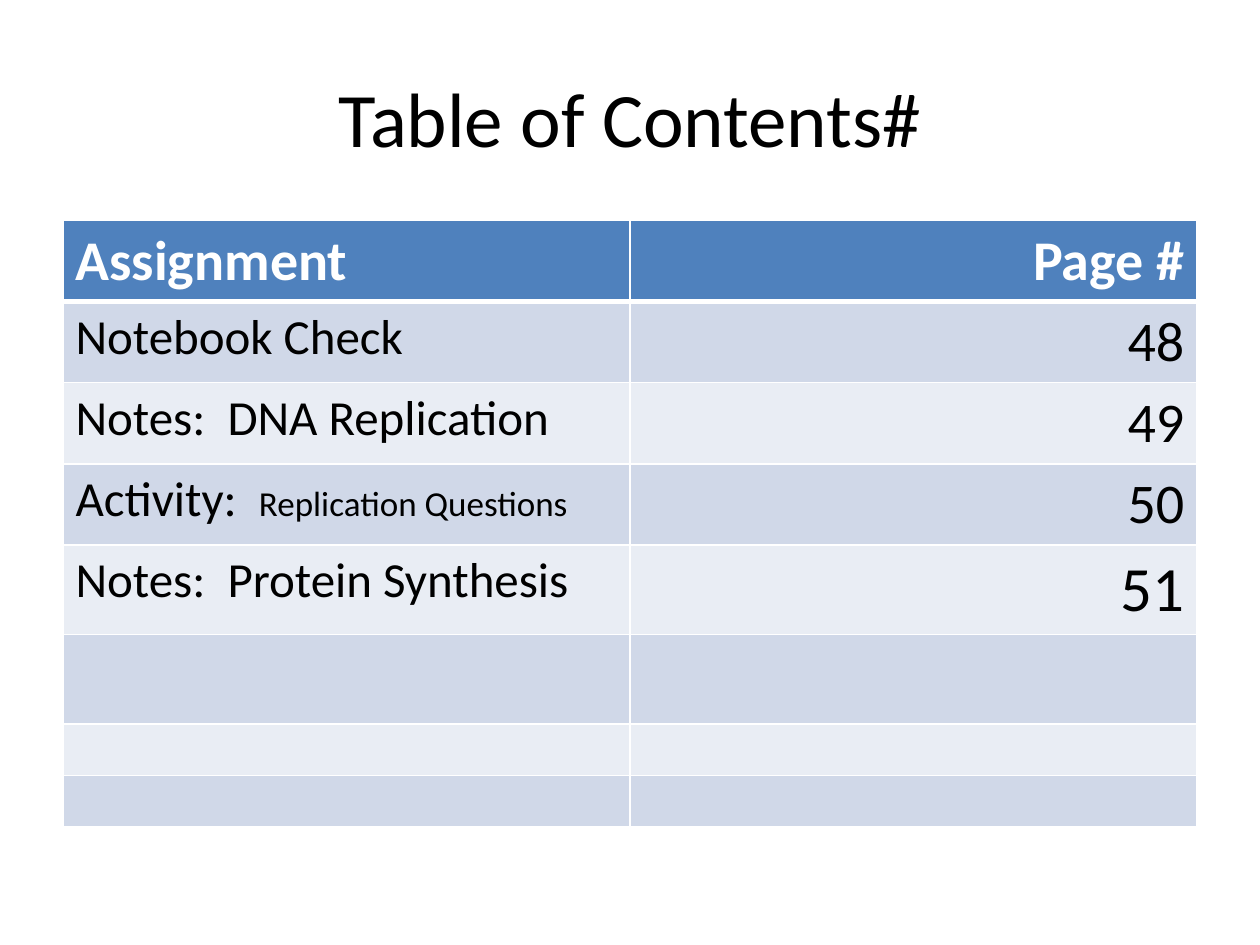
from dataclasses import dataclass

from lxml.etree import SubElement
from pptx import Presentation
from pptx.dml.color import RGBColor
from pptx.enum.text import MSO_ANCHOR, PP_ALIGN
from pptx.oxml.ns import qn
from pptx.util import Pt


@dataclass(frozen=True)
class Theme:
    """Colours, type sizes and line widths of the slide."""

    font: str = "Calibri"
    dark: str = "000000"
    light: str = "FFFFFF"
    header: str = "4F81BD"
    bands: tuple = ("D0D8E8", "E9EDF4")
    title_size: int = 44
    large_size: int = 36
    header_size: int = 32
    body_size: int = 28
    small_size: int = 20
    thin_line: int = 1
    thick_line: int = 3


THEME = Theme()
COLUMN_WIDTH = 324
ROW_HEIGHTS = (46.26,) * 4 + (51.14,) * 2 + (29.2,) * 2
ASSIGNMENTS = (
    ([("Notebook Check", THEME.body_size)], ("48", THEME.header_size)),
    ([("Notes:  DNA Replication", THEME.body_size)], ("49", THEME.header_size)),
    (
        [("Activity:  ", THEME.body_size), ("Replication Questions", THEME.small_size)],
        ("50", THEME.header_size),
    ),
    ([("Notes:  Protein Synthesis", THEME.body_size)], ("51", THEME.large_size)),
)


def add_text(paragraph, text, size, color=THEME.dark, bold=False, align=PP_ALIGN.LEFT):
    """Append a formatted run to a paragraph and align the paragraph."""
    paragraph.alignment = align
    run = paragraph.add_run()
    run.text = text
    run.font.name = THEME.font
    run.font.size = Pt(size)
    run.font.bold = bold
    run.font.color.rgb = RGBColor.from_string(color)


def add_title(slide, text):
    """Place and fill the title placeholder."""
    title = slide.shapes.title
    title.left, title.top, title.width, title.height = Pt(36), Pt(21.6), Pt(648), Pt(90)
    title.text_frame.vertical_anchor = MSO_ANCHOR.MIDDLE
    add_text(
        title.text_frame.paragraphs[0], text, THEME.title_size, align=PP_ALIGN.CENTER
    )


def set_borders(cell, top, bottom):
    """Draw the four cell borders, with their own widths above and below."""
    properties = cell._tc.get_or_add_tcPr()
    widths = {"L": THEME.thin_line, "R": THEME.thin_line, "T": top, "B": bottom}
    for side, width in widths.items():
        line = SubElement(properties, qn(f"a:ln{side}"), w=str(Pt(width)))
        fill = SubElement(line, qn("a:solidFill"))
        SubElement(fill, qn("a:srgbClr"), val=THEME.light)


def format_cell(cell, row_index):
    """Give a cell the borders and fill of its row."""
    set_borders(
        cell,
        top=THEME.thick_line if row_index == 1 else THEME.thin_line,
        bottom=THEME.thick_line if row_index == 0 else THEME.thin_line,
    )
    color = THEME.bands[(row_index - 1) % 2] if row_index else THEME.header
    cell.fill.solid()
    cell.fill.fore_color.rgb = RGBColor.from_string(color)


def fill_row(cells, assignment, page, **text_format):
    """Write the assignment runs at the left and the page at the right."""
    for text, size in assignment:
        add_text(cells[0].text_frame.paragraphs[0], text, size, **text_format)
    add_text(
        cells[1].text_frame.paragraphs[0], *page, align=PP_ALIGN.RIGHT, **text_format
    )


def add_contents_table(slide):
    """Add the table of assignments and page numbers."""
    table = slide.shapes.add_table(
        len(ROW_HEIGHTS), 2, Pt(36), Pt(126), Pt(2 * COLUMN_WIDTH), Pt(sum(ROW_HEIGHTS))
    ).table
    for column in table.columns:
        column.width = Pt(COLUMN_WIDTH)
    for index, (row, height) in enumerate(zip(table.rows, ROW_HEIGHTS)):
        row.height = Pt(height)
        for cell in row.cells:
            format_cell(cell, index)
    fill_row(
        [table.cell(0, 0), table.cell(0, 1)],
        [("Assignment", THEME.header_size)],
        ("Page #", THEME.header_size),
        color=THEME.light,
        bold=True,
    )
    for index, (assignment, page) in enumerate(ASSIGNMENTS, start=1):
        fill_row([table.cell(index, 0), table.cell(index, 1)], assignment, page)


def main():
    """Build the contents slide and save it."""
    presentation = Presentation()
    presentation.slide_width, presentation.slide_height = Pt(720), Pt(540)
    slide = presentation.slides.add_slide(presentation.slide_layouts[5])
    add_title(slide, "Table of Contents#")
    add_contents_table(slide)
    presentation.save("out.pptx")


if __name__ == "__main__":
    main()
